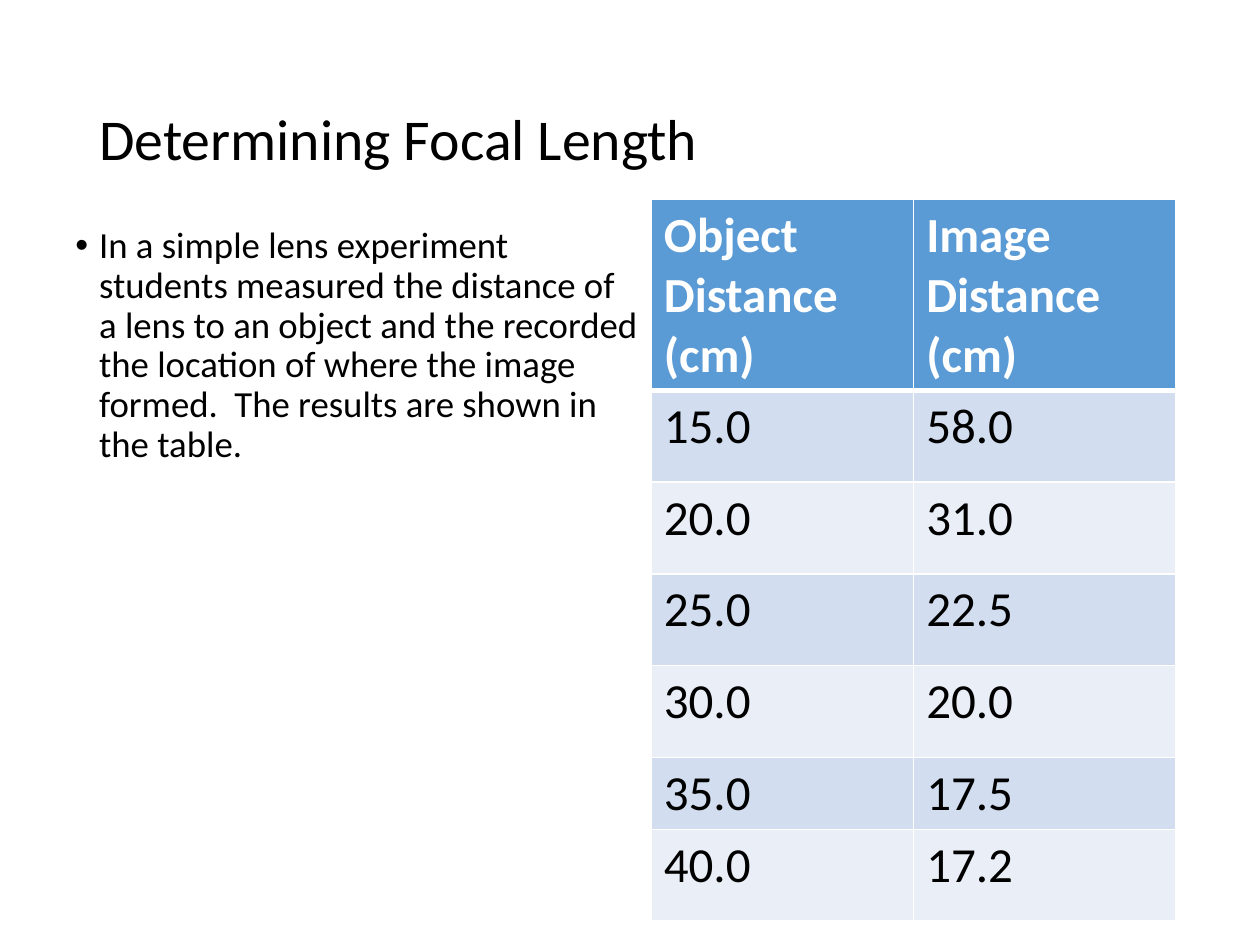
from lxml import etree
from pptx import Presentation
from pptx.dml.color import RGBColor
from pptx.enum import text
from pptx.oxml import ns
from pptx.util import Cm, Pt

FONT = "Calibri"
BLACK, WHITE = "000000", "FFFFFF"
HEADER_FILL = "5B9BD5"
BAND_FILLS = ("D2DEEF", "EAEFF7")

TITLE = "Determining Focal Length"
BODY = (
    "In a simple lens experiment students measured the distance of a lens "
    "to an object and the recorded the location of where the image formed.  "
    "The results are shown in the table."
)
ROWS = [
    ("Object Distance (cm)", "Image Distance (cm)"),
    ("15.0", "58.0"),
    ("20.0", "31.0"),
    ("25.0", "22.5"),
    ("30.0", "20.0"),
    ("35.0", "17.5"),
    ("40.0", "17.2"),
]
ROW_HEIGHTS = [3.85, 1.85, 1.85, 1.85, 1.85, 1.45, 1.85]
COLUMN_WIDTH = 5.29


def color(value):
    return RGBColor.from_string(value)


def add_run(paragraph, words, size, font_color=BLACK, bold=False):
    run = paragraph.add_run()
    run.text = words
    run.font.name = FONT
    run.font.size = Pt(size)
    run.font.bold = bold
    run.font.color.rgb = color(font_color)


def add_text(slide, box, words, size, anchor):
    shape = slide.shapes.add_textbox(*map(Cm, box))
    frame = shape.text_frame
    frame.word_wrap = True
    frame.vertical_anchor = anchor
    paragraph = frame.paragraphs[0]
    paragraph.line_spacing = 0.9
    add_run(paragraph, words, size)
    return paragraph


def add_bullet(paragraph, indent):
    properties = paragraph._p.get_or_add_pPr()
    properties.set("marL", str(Cm(indent)))
    properties.set("indent", str(-Cm(indent)))
    etree.SubElement(properties, ns.qn("a:buFont")).set("typeface", "Arial")
    etree.SubElement(properties, ns.qn("a:buChar")).set("char", "•")


def set_border(cell, side, width):
    properties = cell._tc.get_or_add_tcPr()
    line = etree.SubElement(properties, ns.qn(f"a:ln{side}"), w=str(Pt(width)))
    fill = etree.SubElement(line, ns.qn("a:solidFill"))
    etree.SubElement(fill, ns.qn("a:srgbClr")).set("val", WHITE)


def fill_cell(cell, words, row):
    header = row == 0
    widths = {"L": 1, "R": 1, "T": 3 if row == 1 else 1, "B": 3 if header else 1}
    for side, width in widths.items():
        set_border(cell, side, width)
    cell.fill.solid()
    cell.fill.fore_color.rgb = color(HEADER_FILL if header else BAND_FILLS[(row - 1) % 2])
    add_run(cell.text_frame.paragraphs[0], words, 28, WHITE if header else BLACK, header)


def add_results(slide, left, top):
    columns = len(ROWS[0])
    frame = slide.shapes.add_table(
        len(ROWS), columns, Cm(left), Cm(top),
        Cm(columns * COLUMN_WIDTH), Cm(sum(ROW_HEIGHTS)),
    )
    table = frame.table
    for column in table.columns:
        column.width = Cm(COLUMN_WIDTH)
    for row, values in enumerate(ROWS):
        table.rows[row].height = Cm(ROW_HEIGHTS[row])
        for column, words in enumerate(values):
            fill_cell(table.cell(row, column), words, row)


def main():
    presentation = Presentation()
    presentation.slide_width, presentation.slide_height = Cm(25.4), Cm(19.05)
    slide = presentation.slides.add_slide(presentation.slide_layouts[6])
    add_text(slide, (1.75, 1.01, 21.9, 3.68), TITLE, 33, text.MSO_ANCHOR.MIDDLE)
    body = add_text(slide, (1.27, 4.45, 11.86, 12.57), BODY, 21, text.MSO_ANCHOR.TOP)
    body.space_before = Pt(7.5)
    add_bullet(body, 0.48)
    add_results(slide, 13.13, 4.02)
    presentation.save("out.pptx")


if __name__ == "__main__":
    main()
